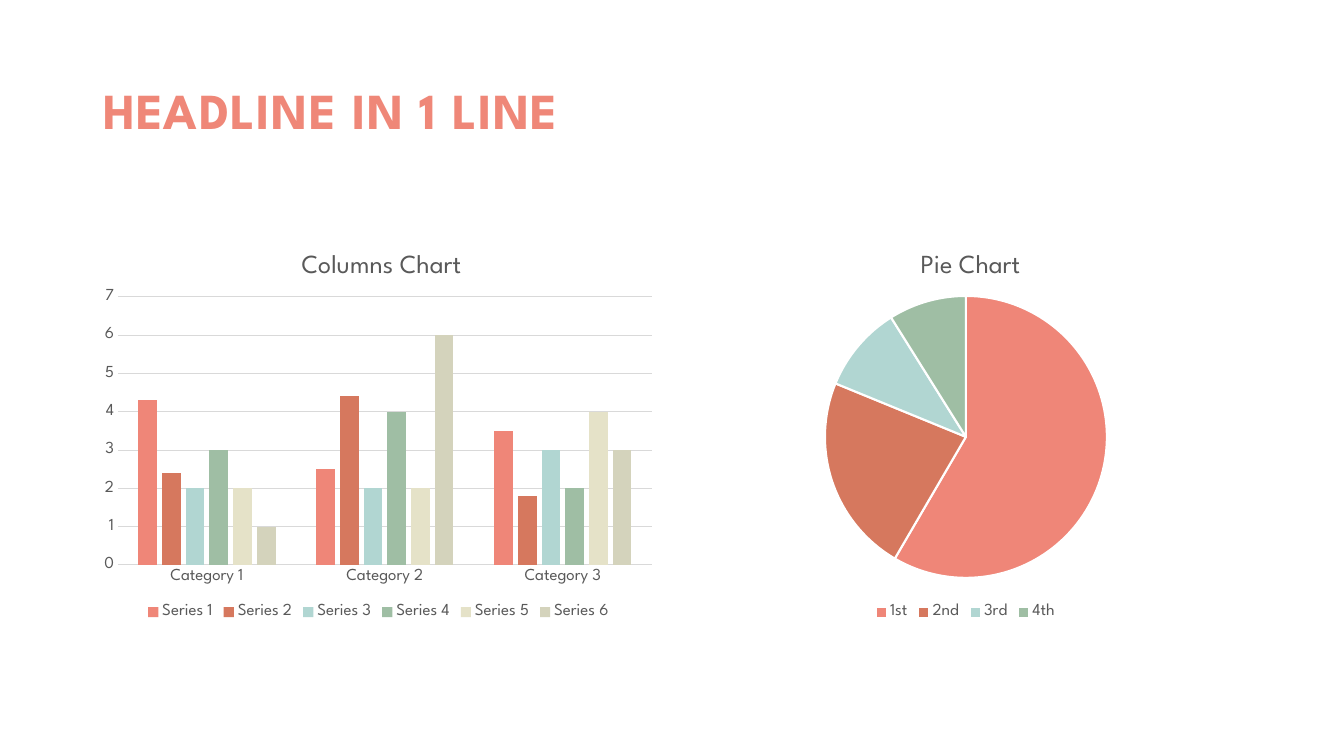
from lxml import etree
from pptx import Presentation
from pptx.chart.data import CategoryChartData as Data
from pptx.dml.color import RGBColor as RGB
from pptx.enum.chart import XL_CHART_TYPE as Kind, XL_LEGEND_POSITION as Pos, XL_TICK_MARK as Tick
from pptx.enum.text import MSO_ANCHOR as Anchor
from pptx.oxml import parse_xml
from pptx.util import Pt

# Content
HEAD = "HEADLINE IN 1 LINE"
BARS = {
    "title": "Columns Chart",
    "kind": Kind.COLUMN_CLUSTERED,
    "cats": ["Category 1", "Category 2", "Category 3"],
    "rows": [
        ("Series 1", (4.3, 2.5, 3.5)),
        ("Series 2", (2.4, 4.4, 1.8)),
        ("Series 3", (2, 2, 3)),
        ("Series 4", (3, 4, 2)),
        ("Series 5", (2, 2, 4)),
        ("Series 6", (1, 6, 3)),
    ],
    "box": (93, 228, 571, 396),
    "plot": (118, 297, 534, 268),
    "label": (297, 247),
}
PIE = {
    "title": "Pie Chart",
    "kind": Kind.PIE,
    "cats": ["1st", "2nd", "3rd", "4th"],
    "rows": [("Series 1", (59, 23, 10, 9))],
    "box": (680, 228, 571, 396),
    "plot": (825, 296, 282, 282),
    "label": (916, 247),
}

# Style
FONT = "League Spartan"
CORAL = RGB(0xEF, 0x87, 0x78)
GREY = RGB(0x59, 0x59, 0x59)
RULE = RGB(0xD9, 0xD9, 0xD9)
WHITE = RGB(0xFF, 0xFF, 0xFF)
TINTS = [RGB(0xEF, 0x86, 0x78), RGB(0xD6, 0x78, 0x5E), RGB(0xB1, 0xD6, 0xD2),
         RGB(0x9F, 0xBE, 0xA4), RGB(0xE5, 0xE2, 0xC8), RGB(0xD4, 0xD3, 0xBC)]
NS = "http://schemas.openxmlformats.org/drawingml/2006/chart"
PX = 914400 / 100.8


def emu(*nums):
    return [round(n * PX) for n in nums]


def style(font, size, color=GREY):
    font.name, font.size = FONT, Pt(size)
    font.color.rgb = color


def place(node, index, box, spot):
    """Pin a chart part at a px spot, as shares of the chart box."""
    for old in node.findall(f"{{{NS}}}layout"):
        node.remove(old)
    layout = parse_xml(f'<c:layout xmlns:c="{NS}"><c:manualLayout/></c:layout>')
    parts = []
    if len(spot) == 4:
        parts.append(("layoutTarget", "inner"))
    parts += [("xMode", "edge"), ("yMode", "edge"),
              ("x", (spot[0] - box[0]) / box[2]), ("y", (spot[1] - box[1]) / box[3])]
    if len(spot) == 4:
        parts += [("w", spot[2] / box[2]), ("h", spot[3] / box[3])]
    for tag, val in parts:
        etree.SubElement(layout[0], f"{{{NS}}}{tag}").set("val", str(val))
    node.insert(index, layout)


def draw(slide, item):
    """Add a chart with its title, legend and plot area."""
    data = Data()
    data.categories = item["cats"]
    for name, vals in item["rows"]:
        data.add_series(name, vals)
    chart = slide.shapes.add_chart(item["kind"], *emu(*item["box"]), data).chart
    style(chart.font, 12)
    chart.has_title = True
    run = chart.chart_title.text_frame.paragraphs[0].add_run()
    run.text = item["title"]
    style(run.font, 18.6)
    run.font.bold = False
    chart.has_legend = True
    chart.legend.position = Pos.BOTTOM
    chart.legend.include_in_layout = False
    style(chart.legend.font, 12)
    area = chart.element.find(f".//{{{NS}}}plotArea")
    place(area, 0, item["box"], item["plot"])
    place(chart.element.find(f".//{{{NS}}}title"), 1, item["box"], item["label"])
    return chart


def paint(part, color):
    part.format.fill.solid()
    part.format.fill.fore_color.rgb = color


def edge(line, color, width):
    line.color.rgb = color
    line.width = Pt(width)


deck = Presentation()
deck.slide_width, deck.slide_height = emu(1344, 756)
slide = deck.slides.add_slide(deck.slide_layouts[5])

# Headline
title = slide.shapes.title
title.left, title.top, title.width, title.height = emu(93, 40, 1159, 146)
frame = title.text_frame
frame.vertical_anchor = Anchor.MIDDLE
frame.word_wrap = True
para = frame.paragraphs[0]
para.alignment = 1
para.line_spacing = 0.9
run = para.add_run()
run.text = HEAD
style(run.font, 36, CORAL)
run.font.bold = True
run.font._element.set("spc", "100")

# Column chart
chart = draw(slide, BARS)
plot = chart.plots[0]
plot.gap_width, plot.overlap = 219, -27
plot.vary_by_categories = False
for row, tint in zip(plot.series, TINTS):
    paint(row, tint)
for axis in (chart.category_axis, chart.value_axis):
    axis.major_tick_mark = axis.minor_tick_mark = Tick.NONE
    style(axis.tick_labels.font, 12)
edge(chart.category_axis.format.line, RULE, 0.75)
scale = chart.value_axis
scale.minimum_scale, scale.maximum_scale, scale.major_unit = 0, 7, 1
scale.format.line.fill.background()
scale.has_major_gridlines = True
edge(scale.major_gridlines.format.line, RULE, 0.75)

# Pie chart
plot = draw(slide, PIE).plots[0]
plot.vary_by_categories = True
for i in range(len(PIE["cats"])):
    slice_ = plot.series[0].points[i]
    paint(slice_, TINTS[i])
    edge(slice_.format.line, WHITE, 1.5)

deck.save("out.pptx")
